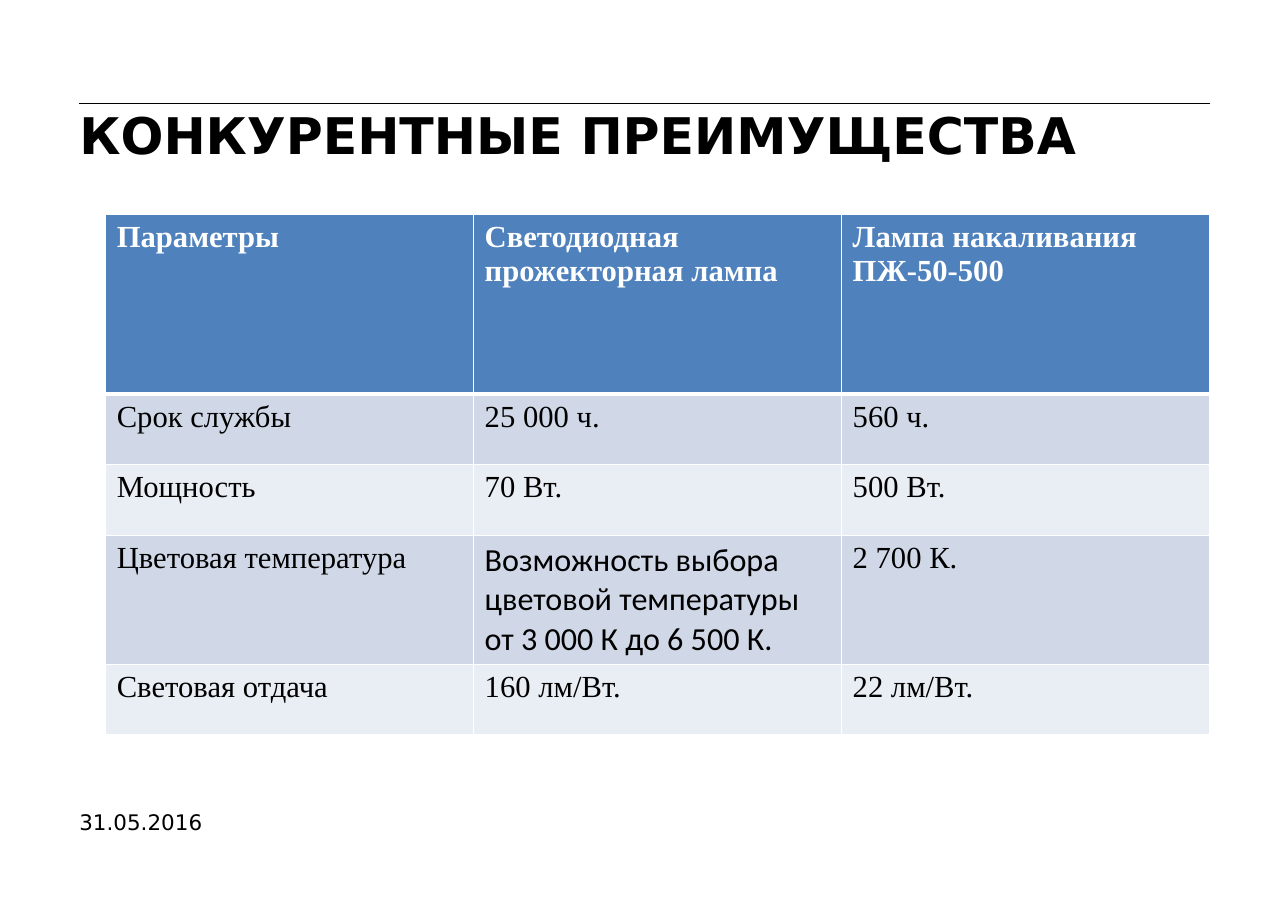
from dataclasses import dataclass

from lxml import etree
from pptx import Presentation
from pptx import util as u
from pptx.dml.color import RGBColor
from pptx.enum import shapes, text
from pptx.oxml import ns


@dataclass(frozen=True)
class Theme:
    ink: str = "000000"
    paper: str = "FFFFFF"
    header_fill: str = "4F81BD"
    bands: tuple[str, str] = ("D0D8E8", "E9EDF4")
    heading_font: str = "DejaVu Sans"
    table_font: str = "Times New Roman"
    accent_font: str = "Calibri"
    title_size: int = 33
    title_leading: int = 34
    date_size: int = 14
    table_size: int = 20
    accent_size: int = 21
    thin_border: int = 1
    thick_border: int = 3


@dataclass(frozen=True)
class Style:
    font: str
    size: int
    color: str
    bold: bool = False


@dataclass(frozen=True)
class Feature:
    name: str
    led: str
    filament: str


THEME = Theme()
TITLE = Style(THEME.heading_font, THEME.title_size, THEME.ink, True)
DATE = Style(THEME.heading_font, THEME.date_size, THEME.ink)
HEADER = Style(THEME.table_font, THEME.table_size, THEME.paper, True)
BODY = Style(THEME.table_font, THEME.table_size, THEME.ink)
ACCENT = Style(THEME.accent_font, THEME.accent_size, THEME.ink)

LEFT, WIDTH = 0.72, 10.26
COLUMN_WIDTH, HEADER_HEIGHT, ROW_HEIGHT = 3.34, 1.63, 0.64
ACCENT_CELL = (3, 1)
FEATURES = [
    Feature("Параметры", "Светодиодная прожекторная лампа", "Лампа накаливания ПЖ-50-500"),
    Feature("Срок службы", "25 000 ч.", "560 ч."),
    Feature("Мощность", "70 Вт.", "500 Вт."),
    Feature("Цветовая температура",
            "Возможность выбора цветовой температуры от 3 000 К до 6 500 К.", "2 700 К."),
    Feature("Световая отдача", "160 лм/Вт.", "22 лм/Вт."),
]


def write(frame, words: str, style: Style):
    frame.text = words
    para = frame.paragraphs[0]
    para.font.name = style.font
    para.font.size = u.Pt(style.size)
    para.font.bold = style.bold
    para.font.color.rgb = RGBColor.from_string(style.color)
    return para


def clear_margins(frame) -> None:
    frame.margin_left = frame.margin_right = frame.margin_top = frame.margin_bottom = 0
    frame.word_wrap = True
    frame.auto_size = text.MSO_AUTO_SIZE.NONE


def place(shape, left: float, top: float, width: float, height: float) -> None:
    shape.left, shape.top = u.Inches(left), u.Inches(top)
    shape.width, shape.height = u.Inches(width), u.Inches(height)


def add_rule(page) -> None:
    rule = page.shapes.add_connector(
        shapes.MSO_CONNECTOR.STRAIGHT, u.Inches(LEFT), u.Inches(0.94),
        u.Inches(LEFT + WIDTH), u.Inches(0.94))
    rule.line.color.rgb = RGBColor.from_string(THEME.ink)
    rule.line.width = u.Pt(0.75)
    etree.SubElement(rule._element.spPr, ns.qn("a:effectLst"))


def add_title(page) -> None:
    title = page.shapes.title
    place(title, LEFT, 1.02, WIDTH, 1.34)
    frame = title.text_frame
    clear_margins(frame)
    frame.vertical_anchor = text.MSO_ANCHOR.TOP
    para = write(frame, "КОНКУРЕНТНЫЕ ПРЕИМУЩЕСТВА", TITLE)
    para.alignment = text.PP_ALIGN.LEFT
    para.line_spacing = u.Pt(THEME.title_leading)


def add_date(page) -> None:
    box = page.shapes.add_textbox(u.Inches(LEFT), u.Inches(7.22), u.Inches(8.48), u.Inches(0.36))
    clear_margins(box.text_frame)
    box.text_frame.vertical_anchor = text.MSO_ANCHOR.BOTTOM
    write(box.text_frame, "31.05.2016", DATE)


def set_borders(cell, row: int) -> None:
    """Outline a cell, with a thick line between the header and the first row."""
    thick_edge = {0: "lnB", 1: "lnT"}.get(row)
    properties = cell._tc.get_or_add_tcPr()
    for edge in ("lnL", "lnR", "lnT", "lnB"):
        points = THEME.thick_border if edge == thick_edge else THEME.thin_border
        line = etree.SubElement(properties, ns.qn(f"a:{edge}"), w=str(u.Pt(points)))
        fill = etree.SubElement(line, ns.qn("a:solidFill"))
        etree.SubElement(fill, ns.qn("a:srgbClr"), val=THEME.paper)


def add_feature_table(page) -> None:
    height = HEADER_HEIGHT + ROW_HEIGHT * (len(FEATURES) - 1)
    table = page.shapes.add_table(
        len(FEATURES), 3, u.Inches(0.96), u.Inches(1.95),
        u.Inches(COLUMN_WIDTH * 3), u.Inches(height)).table
    for column in table.columns:
        column.width = u.Inches(COLUMN_WIDTH)
    for row, feature in enumerate(FEATURES):
        is_header = row == 0
        table.rows[row].height = u.Inches(HEADER_HEIGHT if is_header else ROW_HEIGHT)
        color = THEME.header_fill if is_header else THEME.bands[(row - 1) % 2]
        for column, words in enumerate((feature.name, feature.led, feature.filament)):
            cell = table.cell(row, column)
            set_borders(cell, row)
            cell.fill.solid()
            cell.fill.fore_color.rgb = RGBColor.from_string(color)
            style = HEADER if is_header else BODY
            write(cell.text_frame, words, ACCENT if (row, column) == ACCENT_CELL else style)


def main() -> None:
    deck = Presentation()
    deck.slide_width, deck.slide_height = u.Inches(11.69), u.Inches(8.27)
    page = deck.slides.add_slide(deck.slide_layouts.get_by_name("Title Only"))
    add_rule(page)
    add_date(page)
    add_title(page)
    add_feature_table(page)
    deck.save("out.pptx")


if __name__ == "__main__":
    main()
